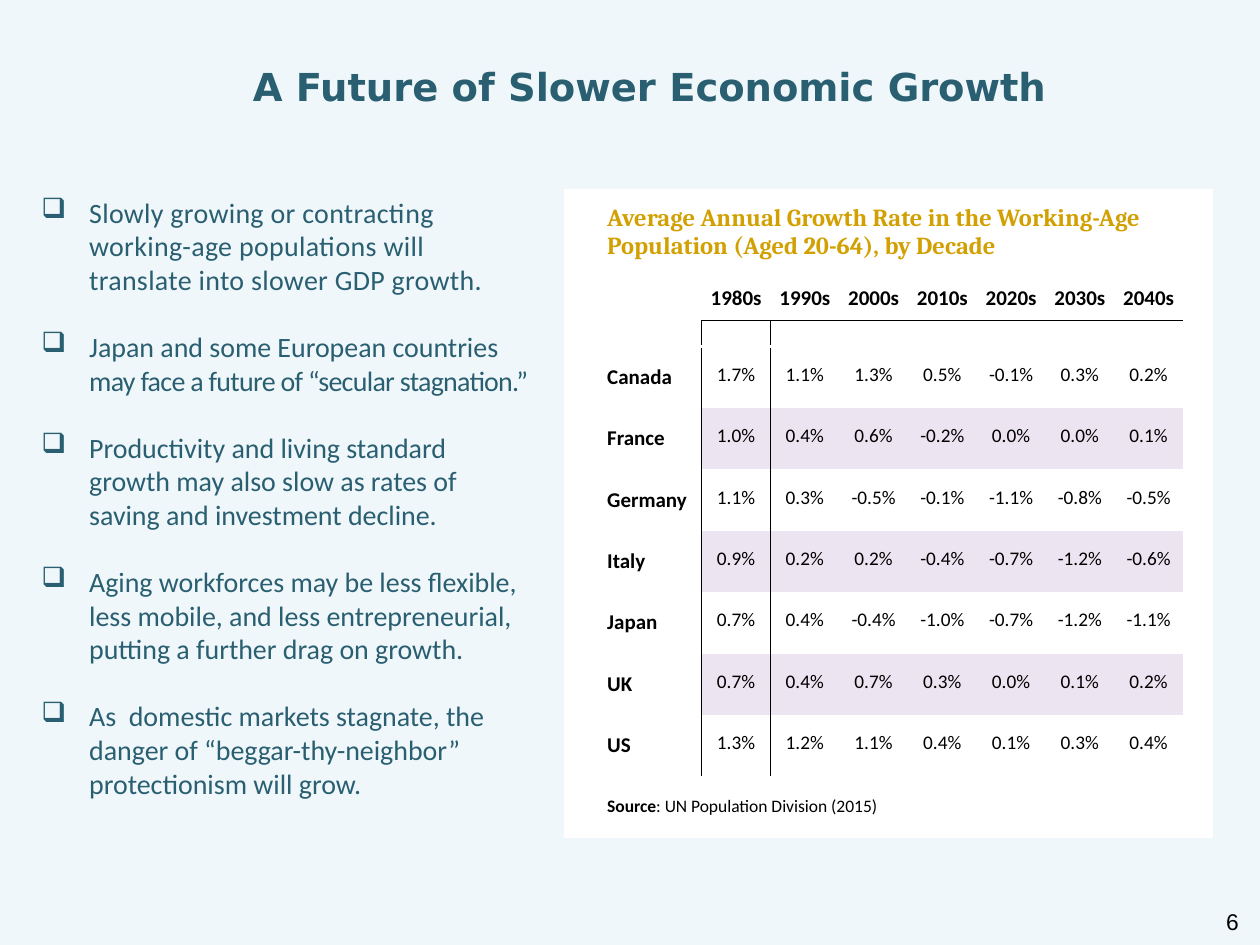
from lxml import etree
from pptx import Presentation
from pptx import util as u
from pptx.dml.color import RGBColor
from pptx.enum import text as t
from pptx.oxml import ns

TEAL = RGBColor(0x29, 0x5F, 0x71)
GOLD = RGBColor(0xD2, 0xA0, 0x00)
PALE = RGBColor(0xF0, 0xF7, 0xFA)
LILAC = RGBColor(0xED, 0xE4, 0xF1)
WHITE = RGBColor(0xFF, 0xFF, 0xFF)
BLACK = RGBColor(0x00, 0x00, 0x00)

TITLE = "A Future of Slower Economic Growth"
POINTS = [
    [("Slowly growing or contracting working-age populations will "
      "translate into slower GDP growth.", 20)],
    [("Japan and some European countries ", 0),
     ("may face a future of “secular stagnation.”", -40)],
    [("Productivity and living standard growth may also slow as rates of "
      "saving and investment decline.", 0)],
    [("Aging workforces may be less flexible, less mobile, and less "
      "entrepreneurial, putting a further drag on growth.", 0)],
    [("As  domestic markets stagnate, the danger of “beggar-thy-neighbor” "
      "protectionism will grow.", 0)],
]
HEAD = ("Average Annual Growth Rate in the Working-Age Population "
        "(Aged 20-64), by Decade")
DECADES = ["1980s", "1990s", "2000s", "2010s", "2020s", "2030s", "2040s"]
RATES = {
    "Canada": [1.7, 1.1, 1.3, 0.5, -0.1, 0.3, 0.2],
    "France": [1.0, 0.4, 0.6, -0.2, 0.0, 0.0, 0.1],
    "Germany": [1.1, 0.3, -0.5, -0.1, -1.1, -0.8, -0.5],
    "Italy": [0.9, 0.2, 0.2, -0.4, -0.7, -1.2, -0.6],
    "Japan": [0.7, 0.4, -0.4, -1.0, -0.7, -1.2, -1.1],
    "UK": [0.7, 0.4, 0.7, 0.3, 0.0, 0.1, 0.2],
    "US": [1.3, 1.2, 1.1, 0.4, 0.1, 0.3, 0.4],
}
SOURCE = [("Source", True), (": UN Population Division (2015)", False)]
COLS = [0.23, 0.85] + [3.82 / 7] * 7 + [0.23]
ROWS = [0.69, 0.35, 0.21] + [3.9 / 8] * 8
PLAIN = "{2D5ABB26-0587-4C30-8999-92F81FD0307C}"


def apply(item, form):
    for name, value in form.items():
        setattr(item, name, value)


def write(para, words, size, face="Calibri", color=BLACK, bold=False):
    run = para.add_run()
    run.text = words
    apply(run.font, dict(size=u.Pt(size), name=face, bold=bold))
    run.font.color.rgb = color
    return run


def pad(frame, left, top, right, bottom):
    sides = ("margin_left", "margin_top", "margin_right", "margin_bottom")
    apply(frame, dict(zip(sides, map(u.Inches, (left, top, right, bottom)))))


def hang(para, inch):
    props = para._p.get_or_add_pPr()
    props.set("marL", str(u.Inches(inch)))
    props.set("indent", str(-u.Inches(inch)))
    return props


def edge(cell, side, color, width):
    line = etree.SubElement(cell._tc.get_or_add_tcPr(), ns.qn("a:ln" + side))
    line.set("w", str(u.Pt(width)))
    fill = etree.SubElement(line, ns.qn("a:solidFill"))
    etree.SubElement(fill, ns.qn("a:srgbClr")).set("val", str(color))


def box(slide, *place):
    frame = slide.shapes.add_textbox(*map(u.Inches, place)).text_frame
    frame.word_wrap = True
    return frame


def add_title(slide):
    title = slide.shapes.title
    place = map(u.Inches, (1.11, 0.45, 7.89, 0.47))
    apply(title, dict(zip(("left", "top", "width", "height"), place)))
    frame = title.text_frame
    apply(frame, dict(vertical_anchor=t.MSO_ANCHOR.TOP,
                      auto_size=t.MSO_AUTO_SIZE.NONE))
    pad(frame, 0.3, 0.05, 0.1, 0.05)
    para = frame.paragraphs[0]
    para.alignment = t.PP_ALIGN.CENTER
    write(para, TITLE, 22, "DejaVu Sans", TEAL, True)


def add_points(slide):
    frame = box(slide, 0.23, 1.5, 4.1, 4.96)
    for i, parts in enumerate(POINTS):
        para = frame.add_paragraph() if i else frame.paragraphs[0]
        if i:
            para.space_before = u.Pt(19.2)
        props = hang(para, 0.38)
        etree.SubElement(props, ns.qn("a:buChar")).set("char", "❑")
        for words, gap in parts:
            run = write(para, words, 16, color=TEAL)
            run.font._element.set("spc", str(gap))


def add_rates(slide):
    place = map(u.Inches, (4.48, 1.5, sum(COLS), sum(ROWS)))
    frame = slide.shapes.add_table(len(ROWS), len(COLS), *place)
    table = frame.table
    apply(table, dict(first_row=False, horz_banding=False))
    table._tbl.tblPr.find(ns.qn("a:tableStyleId")).text = PLAIN
    for col, wide in zip(table.columns, COLS):
        col.width = u.Inches(wide)
    for row, high in zip(table.rows, ROWS):
        row.height = u.Inches(high)

    last = len(ROWS) - 1
    for r in range(len(ROWS)):
        for c in range(len(COLS)):
            cell = table.cell(r, c)
            data = 2 <= c <= 8
            if data and 2 <= r < last:
                edge(cell, "L", *((BLACK, 0.5) if c == 2 else (WHITE, 0)))if c == 2 else None
            if c == 1 and 3 <= r < last:
                edge(cell, "R", BLACK, 0.5)
            if data and r == 2:
                edge(cell, "T", BLACK, 0.5)
            if data and r in (1, 2):
                edge(cell, "B", *((BLACK, 0.5) if r == 1 else (WHITE, 2.25)))
            cell.fill.solid()
            band = data and 3 <= r < last and r % 2 == 0
            cell.fill.fore_color.rgb = LILAC if band else WHITE
            cell.vertical_anchor = t.MSO_ANCHOR.MIDDLE
            if data and r in (1, 2):
                pad(cell, 0, 0, 0, 0)
            elif data and 3 <= r < last:
                pad(cell, 0.01, 0.01, 0.01, 0.05)
            para = cell.text_frame.paragraphs[0]
            para._p.get_or_add_endParaRPr().set("sz", "600")

    for r in (0, last):
        table.cell(r, 1).merge(table.cell(r, 8))
    for c in (0, 1, 9):
        table.cell(1, c).merge(table.cell(2, c))

    def spot(r, c):
        return table.cell(r, c).text_frame.paragraphs[0]

    def center(r, c, words, size, bold):
        para = spot(r, c)
        para.alignment = t.PP_ALIGN.CENTER
        write(para, words, size, bold=bold)

    write(spot(0, 1), HEAD, 14, "Cambria", GOLD, True)
    for c, decade in enumerate(DECADES, 2):
        center(1, c, decade, 12, True)
    for r, (land, rates) in enumerate(RATES.items(), 3):
        write(spot(r, 1), land, 12, bold=True)
        for c, rate in enumerate(rates, 2):
            center(r, c, f"{rate:.1f}%", 11, False)
    note = spot(last, 1)
    hang(note, 0.38)
    note.space_before = u.Pt(5)
    for words, bold in SOURCE:
        write(note, words, 10, bold=bold)


def add_number(slide):
    frame = box(slide, 9.42, 7.17, 0.51, 0.29)
    frame.vertical_anchor = t.MSO_ANCHOR.MIDDLE
    para = frame.paragraphs[0]
    para.alignment = t.PP_ALIGN.RIGHT
    write(para, "6", 13, "Arial")


def main():
    deck = Presentation()
    apply(deck, dict(slide_width=u.Inches(10), slide_height=u.Inches(7.5)))
    slide = deck.slides.add_slide(deck.slide_layouts[5])
    slide.background.fill.solid()
    slide.background.fill.fore_color.rgb = PALE
    add_points(slide)
    add_rates(slide)
    add_number(slide)
    add_title(slide)
    deck.save("out.pptx")


if __name__ == "__main__":
    main()
